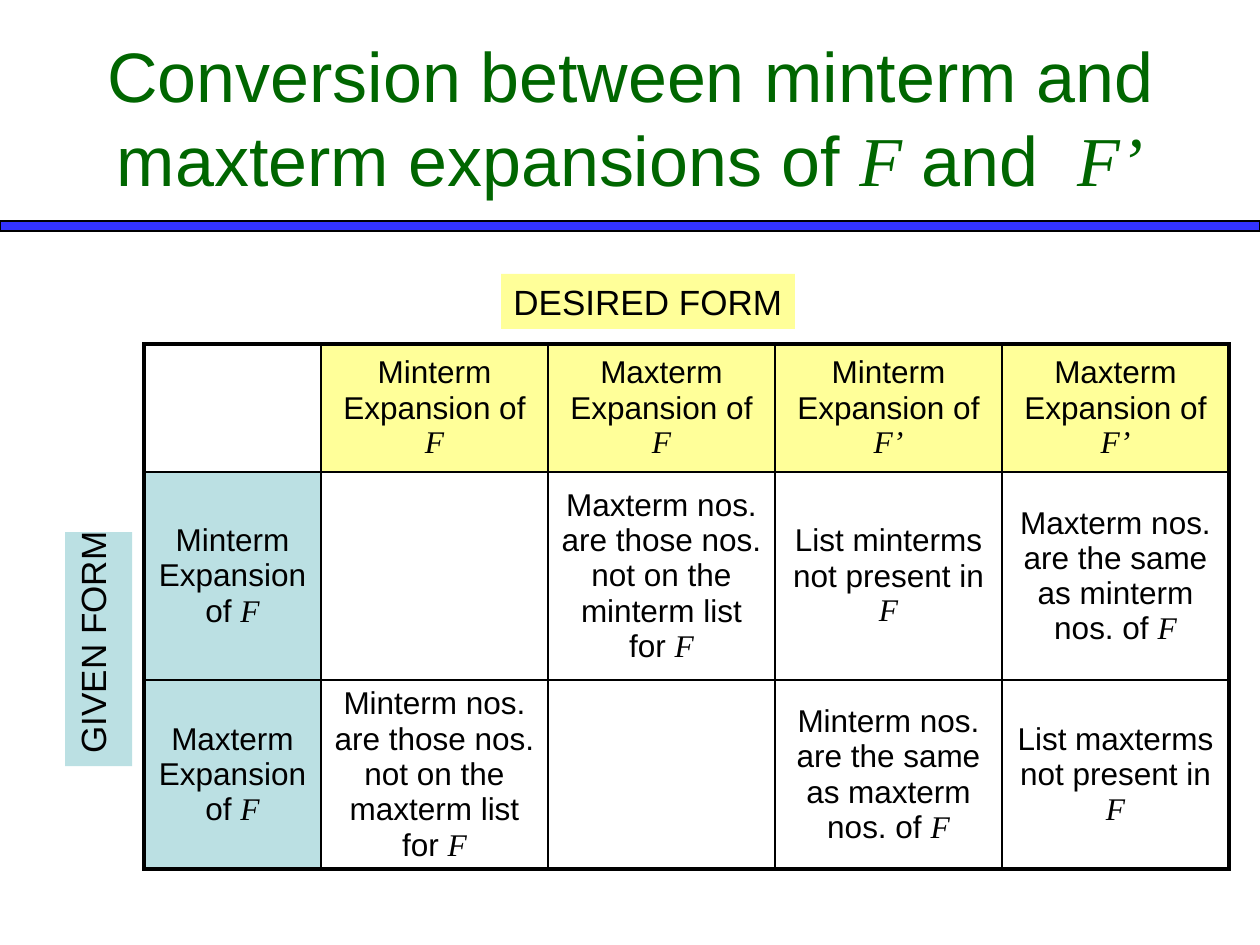
"""Builds a slide with a conversion table for minterm and maxterm expansions."""
from pptx import Presentation
from pptx.dml.color import RGBColor
from pptx.enum.shapes import MSO_SHAPE as Shape
from pptx.enum.text import MSO_ANCHOR as Anchor, MSO_AUTO_SIZE as AutoSize, PP_ALIGN as Align
from pptx.oxml import parse_xml
from pptx.oxml.ns import nsdecls
from pptx.util import Emu, Pt

PX = 914400 / 126
BLACK, GREEN, BLUE = "000000", "006600", "3333FF"
YELLOW, TEAL = "FFFF99", "BBE0E3"


def px(*lengths):
    return [Emu(round(length * PX)) for length in lengths]


def write(frame, text, size=18, color=BLACK, align=Align.CENTER):
    paragraph = frame.paragraphs[0]
    paragraph.alignment = align
    for index, part in enumerate(text.split("*")):
        if part:
            run = paragraph.add_run()
            run.text = part
            run.font.size = Pt(size)
            run.font.color.rgb = RGBColor.from_string(color)
            run.font.italic = index % 2 == 1
            run.font.name = "Times New Roman" if run.font.italic else "Arial"


prs = Presentation()
prs.slide_width, prs.slide_height = px(1260, 945)
slide = prs.slides.add_slide(prs.slide_layouts[5])

title = slide.shapes.title
title.left, title.top, title.width, title.height = px(63, 38, 1134, 157)
title.text_frame.auto_size = AutoSize.NONE
title.text_frame.vertical_anchor = Anchor.MIDDLE
write(title.text_frame, "Conversion between minterm and maxterm expansions of *F* and  *F’*",
      size=40, color=GREEN)

divider = slide.shapes.add_shape(Shape.RECTANGLE, *px(0, 221, 1260, 10))
divider.shadow.inherit = False
divider.fill.solid()
divider.fill.fore_color.rgb = RGBColor.from_string(BLUE)
divider.line.color.rgb = RGBColor.from_string(BLACK)
divider.line.width = Pt(0.75)

conversions = [
    ["", "Minterm Expansion of *F*", "Maxterm Expansion of *F*",
     "Minterm Expansion of *F’*", "Maxterm Expansion of *F’*"],
    ["Minterm Expansion of *F*", "",
     "Maxterm nos. are those nos. not on the minterm list for *F*",
     "List minterms not present in *F*",
     "Maxterm nos. are the same as minterm nos. of *F*"],
    ["Maxterm Expansion of *F*",
     "Minterm nos. are those nos. not on the maxterm list for *F*", "",
     "Minterm nos. are the same as maxterm nos. of *F*",
     "List maxterms not present in *F*"],
]
column_widths = px(177, 227, 227, 227, 227)
row_heights = px(128, 208, 189)
last_row, last_column = len(row_heights) - 1, len(column_widths) - 1

grid = slide.shapes.add_table(len(row_heights), len(column_widths), *px(144, 344, 1085, 525)).table
grid.first_row = grid.horz_banding = False
for column, width in zip(grid.columns, column_widths):
    column.width = width
for row, height in zip(grid.rows, row_heights):
    row.height = height

for r, entries in enumerate(conversions):
    for c, entry in enumerate(entries):
        cell = grid.cell(r, c)
        cell.vertical_anchor = Anchor.MIDDLE
        write(cell.text_frame, entry)
        outer_edges = {"lnL": c == 0, "lnR": c == last_column, "lnT": r == 0, "lnB": r == last_row}
        for edge, is_outer in outer_edges.items():
            cell._tc.get_or_add_tcPr().append(parse_xml(
                f'<a:{edge} {nsdecls("a")} w="{Pt(2.25 if is_outer else 1)}"><a:solidFill>'
                f'<a:srgbClr val="{BLACK}"/></a:solidFill></a:{edge}>'))
        if entry and 0 in (r, c):
            cell.fill.solid()
            cell.fill.fore_color.rgb = RGBColor.from_string(YELLOW if r == 0 else TEAL)
        else:
            cell.fill.background()

axis_labels = [
    ("GIVEN FORM", (65, 532, 67, 234), TEAL, "eaVert", 180),
    ("DESIRED FORM", (501, 274, 294, 55), YELLOW, "horz", 0),
]
for caption, bounds, fill, direction, rotation in axis_labels:
    label = slide.shapes.add_textbox(*px(*bounds))
    label.rotation = rotation
    label.fill.solid()
    label.fill.fore_color.rgb = RGBColor.from_string(fill)
    label.text_frame.word_wrap = False
    label.text_frame.auto_size = AutoSize.SHAPE_TO_FIT_TEXT
    label.text_frame._txBody.bodyPr.set("vert", direction)
    write(label.text_frame, caption, size=20, align=Align.LEFT)

prs.save("out.pptx")
